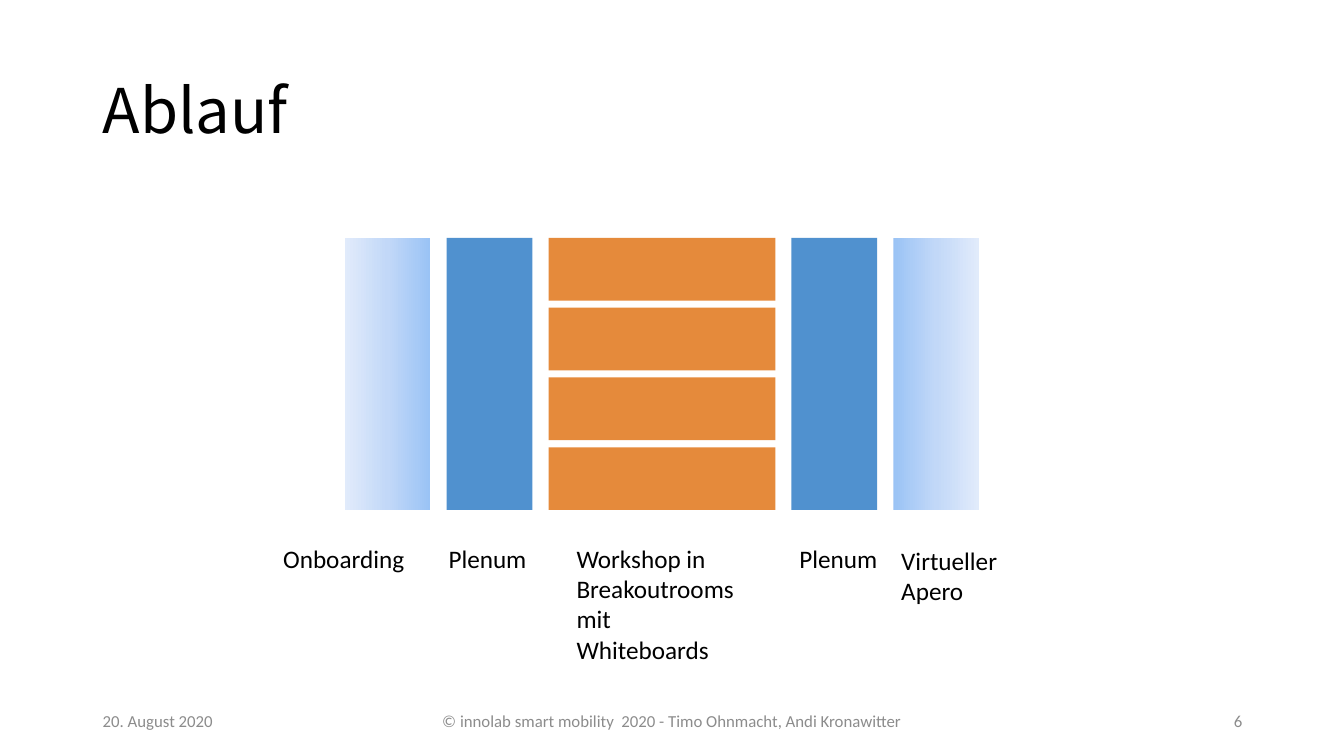
"""Build the "Ablauf" slide: workshop phases as coloured columns with labels."""
from copy import deepcopy

from pptx import Presentation
from pptx.dml.color import RGBColor
from pptx.enum.shapes import MSO_SHAPE
from pptx.enum.text import MSO_ANCHOR, PP_ALIGN
from pptx.util import Pt

RECTANGLE = MSO_SHAPE.RECTANGLE
TOP, MIDDLE = MSO_ANCHOR.TOP, MSO_ANCHOR.MIDDLE
LEFT, CENTER, RIGHT = PP_ALIGN.LEFT, PP_ALIGN.CENTER, PP_ALIGN.RIGHT

EMU_PER_PX = 9144
SLIDE_SIZE = (1333, 750)

THEME = {
    "plenum": "5091CF",
    "workshop": "E58A3B",
    "fade": ("9AC3F5", "C2D8F8", "E1EBFB"),
    "title": {"name": "Noto Sans CJK KR", "size": 44, "color": "000000"},
    "label": {"name": "Calibri", "size": 18, "color": "000000"},
    "footer": {"name": "Calibri", "size": 12, "color": "8C8C8C"},
}

TITLE = ("Ablauf", (92, 40, 934, 145))
FOOTER_TOP, FOOTER_HEIGHT = 695, 40
FOOTERS = [
    ("20. August 2020", 92, 225, LEFT),
    ("© innolab smart mobility  2020 - Timo Ohnmacht, Andi Kronawitter", 316, 701, CENTER),
    ("6", 1017, 225, RIGHT),
]

COLUMN_TOP, COLUMN_HEIGHT = 236, 270
FIRST_COLUMN_LEFT, COLUMN_GAP = 342, 16
ROOM_GAP = 7
PHASES = [
    {"width": 85, "rooms": 1, "angle": 180},
    {"width": 85, "rooms": 1, "color": "plenum"},
    {"width": 225, "rooms": 4, "color": "workshop"},
    {"width": 85, "rooms": 1, "color": "plenum"},
    {"width": 85, "rooms": 1, "angle": 0},
]
LABELS = [
    (["Onboarding"], (271, 534, 142, 40)),
    (["Plenum"], (435, 534, 98, 40)),
    (["Workshop in", "Breakoutrooms", "mit Whiteboards"], (562, 534, 186, 101)),
    (["Plenum"], (783, 534, 98, 40)),
    (["Virtueller", "Apero"], (884, 536, 116, 71)),
]


def to_emu(lengths):
    return [round(length * EMU_PER_PX) for length in lengths]


def add_text(slide, lines, box, style, anchor=TOP, wrap=True, **paragraph_format):
    frame = slide.shapes.add_textbox(*to_emu(box)).text_frame
    frame.word_wrap = wrap
    frame.vertical_anchor = anchor
    frame.text = "\n".join(lines)
    theme = THEME[style]
    for paragraph in frame.paragraphs:
        for name, value in paragraph_format.items():
            setattr(paragraph, name, value)
        font = paragraph.runs[0].font
        for name, value in {"name": theme["name"], "size": Pt(theme["size"])}.items():
            setattr(font, name, value)
        font.color.rgb = RGBColor.from_string(theme["color"])


def fill_with_fade(shape, angle):
    shape.fill.gradient()
    shape.fill.gradient_angle = angle
    first_stop = shape.fill._fill._gradFill.gsLst[0]
    first_stop.addnext(deepcopy(first_stop))
    for index, stop in enumerate(shape.fill.gradient_stops):
        stop.position = index / 2
        stop.color.rgb = RGBColor.from_string(THEME["fade"][index])


def add_block(slide, box, phase):
    shape = slide.shapes.add_shape(RECTANGLE, *to_emu(box))
    shape.shadow.inherit = False
    shape.line.fill.background()
    if "angle" in phase:
        fill_with_fade(shape, phase["angle"])
    else:
        shape.fill.solid()
        shape.fill.fore_color.rgb = RGBColor.from_string(THEME[phase["color"]])


def add_phases(slide):
    left = FIRST_COLUMN_LEFT
    for phase in PHASES:
        pitch = (COLUMN_HEIGHT + ROOM_GAP) / phase["rooms"]
        for room in range(phase["rooms"]):
            box = (left, COLUMN_TOP + room * pitch, phase["width"], pitch - ROOM_GAP)
            add_block(slide, box, phase)
        left += phase["width"] + COLUMN_GAP


def main():
    presentation = Presentation()
    presentation.slide_width, presentation.slide_height = to_emu(SLIDE_SIZE)
    slide = presentation.slides.add_slide(presentation.slide_layouts[6])

    title, title_box = TITLE
    add_text(slide, [title], title_box, "title", MIDDLE, line_spacing=0.9)
    add_phases(slide)
    for lines, box in LABELS:
        add_text(slide, lines, box, "label", wrap=False)
    for text, left, width, alignment in FOOTERS:
        box = (left, FOOTER_TOP, width, FOOTER_HEIGHT)
        add_text(slide, [text], box, "footer", MIDDLE, alignment=alignment)

    presentation.save("out.pptx")


if __name__ == "__main__":
    main()
